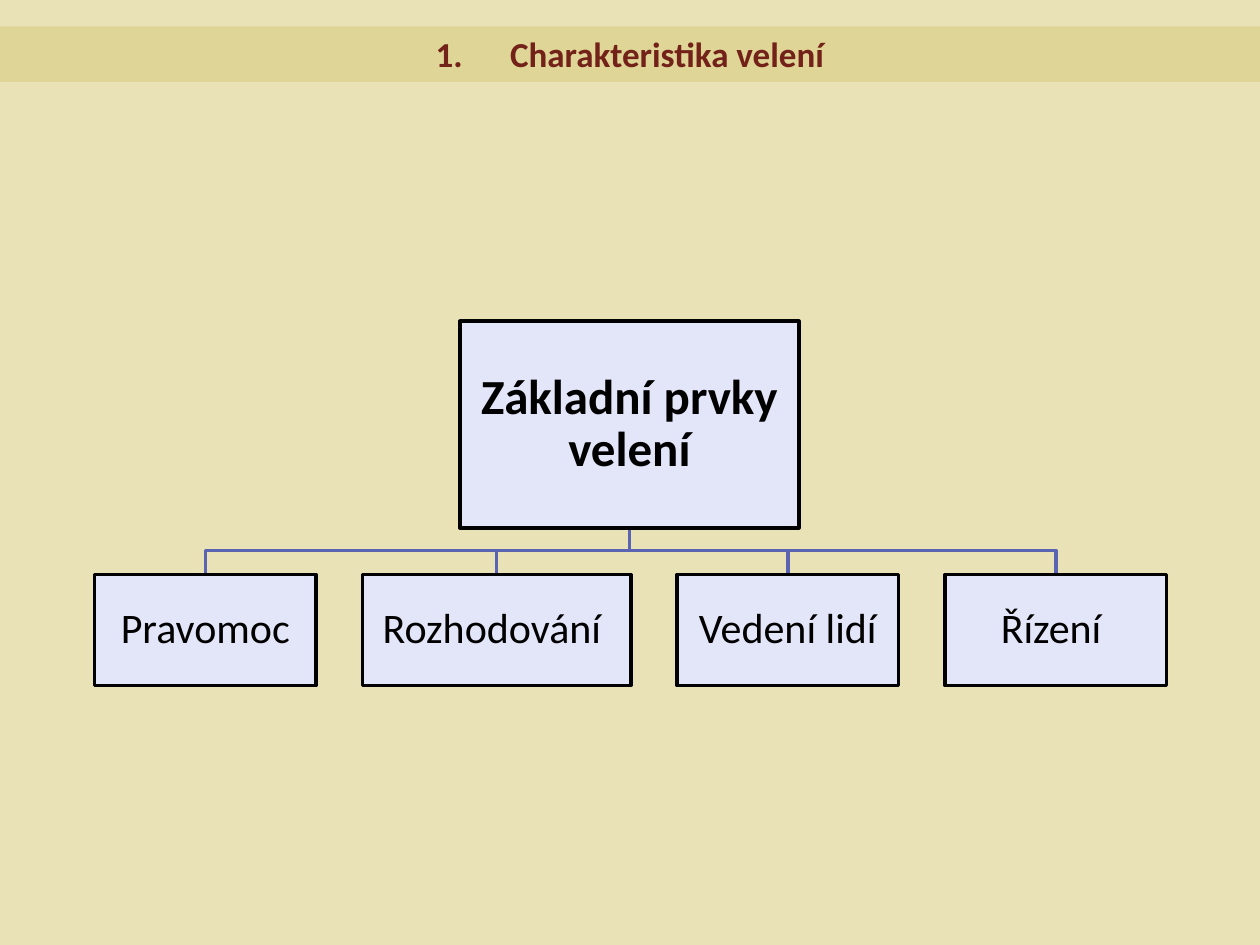
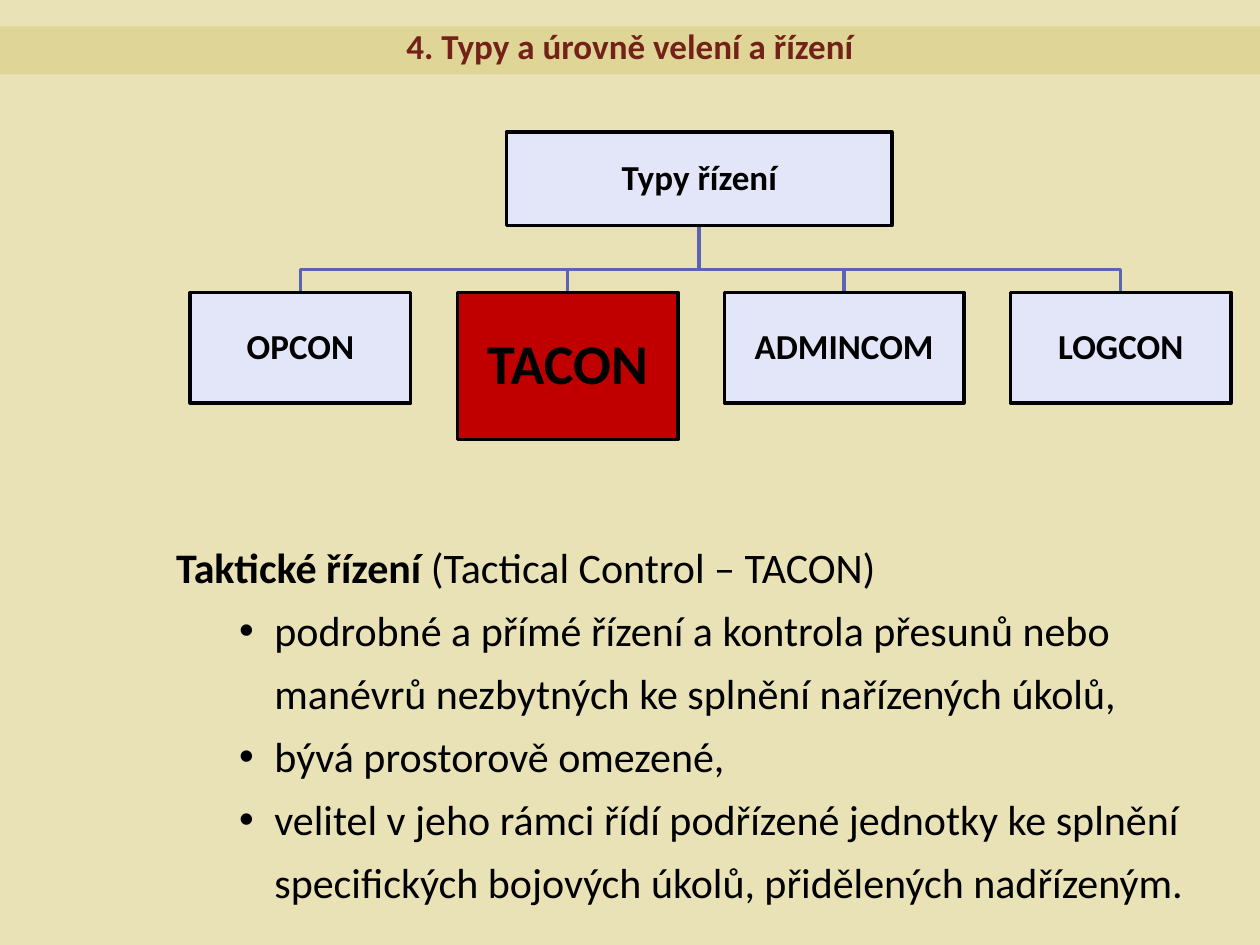
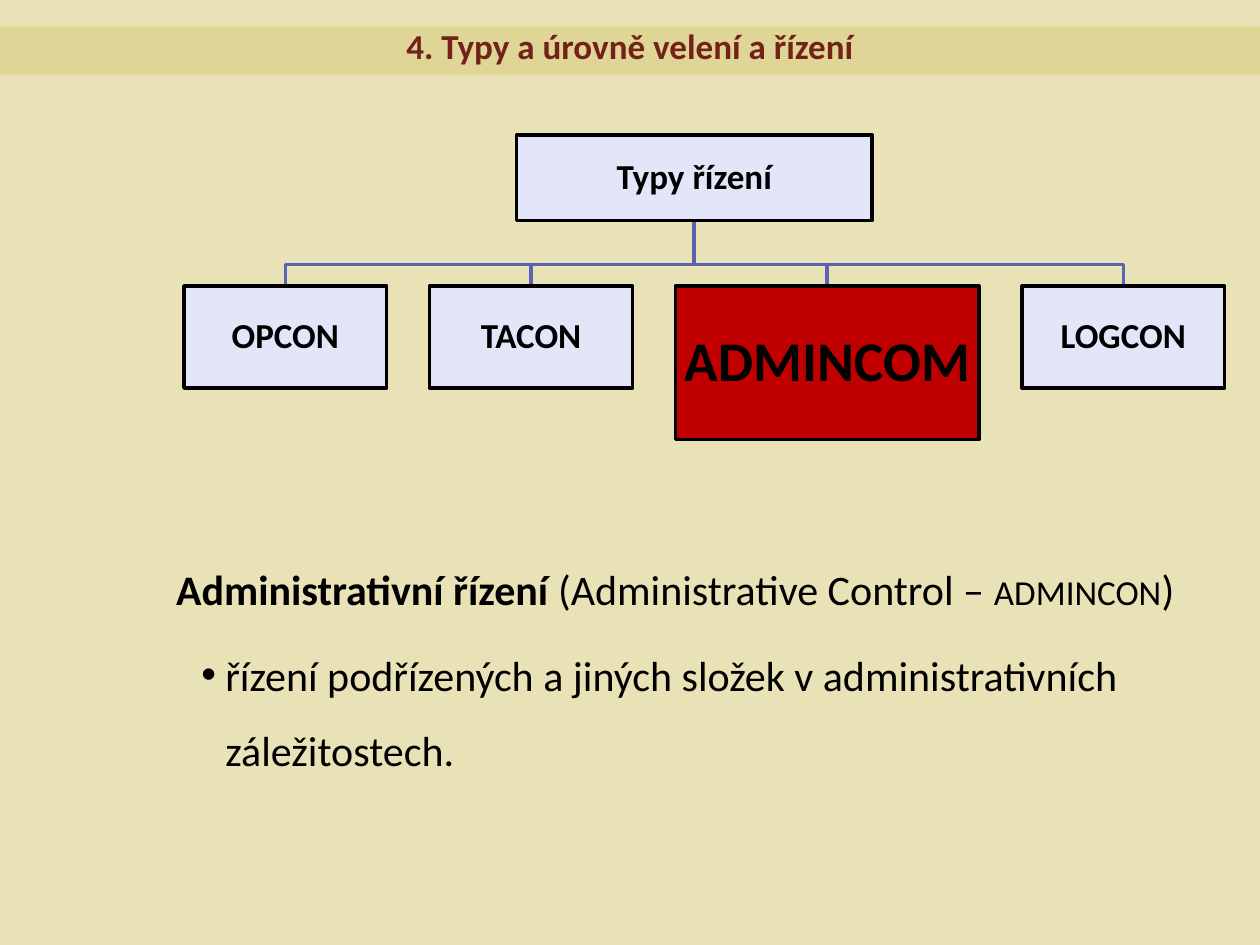
from pptx import Presentation
from pptx.dml.color import RGBColor
from pptx.enum.shapes import MSO_SHAPE as Shape
from pptx.enum.text import MSO_ANCHOR as Anchor, PP_ALIGN as Align
from pptx.oxml.ns import qn
from pptx.util import Inches, Pt
from lxml import etree

CREAM = RGBColor(0xE9, 0xE2, 0xB6)
SAND = RGBColor(0xDF, 0xD5, 0x96)
MAROON = RGBColor(0x72, 0x22, 0x19)
LAVENDER = RGBColor(0xE3, 0xE5, 0xF9)
RED = RGBColor(0xC0, 0x00, 0x00)
INDIGO = RGBColor(0x5B, 0x64, 0xB3)
BLACK = RGBColor(0, 0, 0)
FONT = "Calibri"

LEVELS_TITLE = dict(text="4. Typy a úrovně velení a řízení", height=0.38, spacing=0.8)

SLIDES = [
    dict(
        title=dict(text="Charakteristika velení", height=0.44, spacing=1, numbered=True),
        chart=dict(
            root=("Základní prvky velení", 3.65, 2.55, 2.69, 1.64), root_size=28,
            span=(0.75, 9.26), top=4.56, bus=4.37, size=24, bold=False,
            units=[("Pravomoc", 1.76, 0.88), ("Rozhodování ", 2.13, 0.88),
                   ("Vedení lidí", 1.76, 0.88), ("Řízení ", 1.76, 0.88)]),
    ),
    dict(
        title=LEVELS_TITLE,
        chart=dict(
            root=("Typy řízení", 4.02, 1.05, 3.06, 0.74), root_size=20,
            span=(1.51, 9.77), top=2.32, bus=2.14, size=20, bold=True, focus="TACON",
            units=[("OPCON", 1.75, 0.88), ("TACON", 1.75, 1.17),
                   ("ADMINCOM", 1.9, 0.88), ("LOGCON", 1.75, 0.88)]),
        body=dict(
            top=4.15, height=3.13, spacing=1.25, after=0, level=1, indent=(0.78, -0.28),
            lead=[("Taktické řízení ", True, 24), ("(Tactical Control – TACON)", False, 24)],
            points=["podrobné a přímé řízení a kontrola přesunů nebo manévrů nezbytných "
                    "ke splnění nařízených úkolů,",
                    "bývá prostorově omezené,",
                    "velitel v jeho rámci řídí podřízené jednotky ke splnění specifických "
                    "bojových úkolů, přidělených nadřízeným."]),
    ),
    dict(
        title=LEVELS_TITLE,
        chart=dict(
            root=("Typy řízení", 4.1, 1.07, 2.82, 0.68), root_size=20,
            span=(1.46, 9.72), top=2.27, bus=2.1, size=20, bold=True, focus="ADMINCOM",
            units=[("OPCON", 1.61, 0.81), ("TACON", 1.61, 0.81),
                   ("ADMINCOM", 2.41, 1.22), ("LOGCON", 1.61, 0.81)]),
        body=dict(
            top=4.22, height=1.94, spacing=1.5, after=6, level=0, indent=(0.39, -0.19),
            lead=[("Administrativní řízení ", True, 24), ("(Administrative Control – ", False, 24),
                  ("ADMINCON", False, 20), (")", False, 24)],
            points=["řízení podřízených a jiných složek v administrativních záležitostech."]),
    ),
]


def style(font, size, bold=False, color=BLACK):
    font.name, font.size, font.bold = FONT, Pt(size), bold
    font.color.rgb = color


def add_bullet(paragraph, indent, tag, **attributes):
    properties = paragraph._p.get_or_add_pPr()
    margin, hanging = indent
    properties.set("marL", str(Inches(margin)))
    properties.set("indent", str(Inches(hanging)))
    if tag == "a:buChar":
        etree.SubElement(properties, qn("a:buFont")).set("typeface", "Arial")
    etree.SubElement(properties, qn(tag), attributes)


def add_rect(slide, left, top, width, height, fill):
    rect = slide.shapes.add_shape(
        Shape.RECTANGLE, Inches(left), Inches(top), Inches(width), Inches(height))
    rect.shadow.inherit = False
    rect.fill.solid()
    rect.fill.fore_color.rgb = fill
    return rect


def add_title(slide, text, height, spacing, numbered=False):
    band = add_rect(slide, 0, 0.21, 10, height, SAND)
    band.line.fill.background()
    band.text_frame.vertical_anchor = Anchor.TOP
    heading = band.text_frame.paragraphs[0]
    heading.text = text
    heading.alignment = Align.CENTER
    heading.line_spacing = float(spacing)
    if numbered:
        add_bullet(heading, (0.59, -0.59), "a:buAutoNum", type="arabicPeriod")
    style(heading.font, 20, True, MAROON)


def add_unit(slide, text, left, top, width, height, size, bold, fill=LAVENDER):
    unit = add_rect(slide, left, top, width, height, fill)
    unit.line.color.rgb = BLACK
    unit.line.width = Pt(2)
    frame = unit.text_frame
    frame.word_wrap = True
    frame.vertical_anchor = Anchor.MIDDLE
    frame.margin_left = frame.margin_right = frame.margin_top = frame.margin_bottom = Inches(0.02)
    label = frame.paragraphs[0]
    label.text = text
    label.alignment = Align.CENTER
    label.line_spacing = 0.9
    style(label.font, size, bold)


def add_branch(slide, start, bus, end):
    corners = [start, (start[0], bus), (end[0], bus), end]
    points = [(Inches(x), Inches(y)) for x, y in corners]
    builder = slide.shapes.build_freeform(*points[0])
    builder.add_line_segments(points[1:], close=False)
    branch = builder.convert_to_shape()
    branch.shadow.inherit = False
    branch.fill.background()
    branch.line.color.rgb = INDIGO
    branch.line.width = Pt(2)


def add_org_chart(slide, root, root_size, span, top, bus, size, bold, units, focus=None):
    _, root_left, root_top, root_width, root_height = root
    start = root_left + root_width / 2, root_top + root_height
    gap = (span[1] - span[0] - sum(width for _, width, _ in units)) / (len(units) - 1)
    left, placed = span[0], []
    for text, width, height in units:
        placed.append((text, left, top, width, height))
        add_branch(slide, start, bus, (left + width / 2, top))
        left += width + gap
    add_unit(slide, *root, root_size, True)
    for unit in placed:
        if unit[0] == focus:
            add_unit(slide, *unit, 32, True, RED)
        else:
            add_unit(slide, *unit, size, bold)


def add_body(slide, top, height, spacing, after, level, indent, lead, points):
    box = slide.shapes.add_textbox(Inches(1.3), Inches(top), Inches(8.7), Inches(height))
    frame = box.text_frame
    frame.word_wrap = True
    intro = frame.paragraphs[0]
    for text, bold, size in lead:
        run = intro.add_run()
        run.text = text
        style(run.font, size, bold)
    for text in points:
        point = frame.add_paragraph()
        point.text = text
        point.level = level
    for paragraph in frame.paragraphs:
        paragraph.line_spacing = spacing
        paragraph.space_after = Pt(after)
    for point in frame.paragraphs[1:]:
        add_bullet(point, indent, "a:buChar", char="•")
        style(point.font, 24)


def main():
    deck = Presentation()
    deck.slide_width, deck.slide_height = Inches(10), Inches(7.5)
    for content in SLIDES:
        slide = deck.slides.add_slide(deck.slide_layouts[6])
        slide.background.fill.solid()
        slide.background.fill.fore_color.rgb = CREAM
        add_title(slide, **content["title"])
        add_org_chart(slide, **content["chart"])
        if "body" in content:
            add_body(slide, **content["body"])
    deck.save("out.pptx")


if __name__ == "__main__":
    main()
